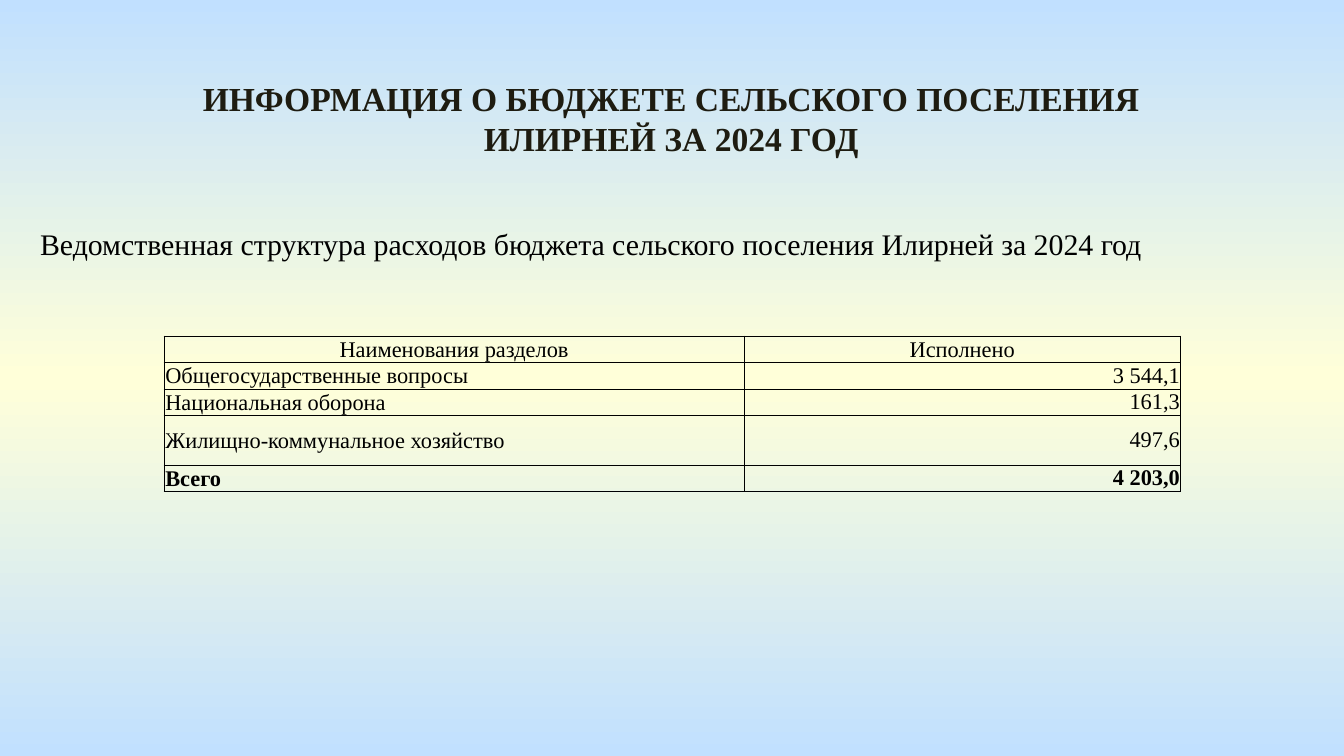
from copy import deepcopy

from lxml import etree
from pptx import Presentation
from pptx.dml.color import RGBColor
from pptx.enum.text import MSO_ANCHOR, MSO_AUTO_SIZE, PP_ALIGN
from pptx.oxml.ns import qn
from pptx.util import Inches, Pt

LEFT, CENTER, RIGHT, JUSTIFY = PP_ALIGN.LEFT, PP_ALIGN.CENTER, PP_ALIGN.RIGHT, PP_ALIGN.JUSTIFY
MIDDLE, BOTTOM, TOP = MSO_ANCHOR.MIDDLE, MSO_ANCHOR.BOTTOM, MSO_ANCHOR.TOP
NO_AUTOFIT = MSO_AUTO_SIZE.NONE

COLORS = {"sky": "C1E0FF", "cream": "FFFFD9", "title": "1E1C11", "text": "000000"}
FONT = "Times New Roman"


def write_text(frame, text, size, color, alignment, bold=False):
    frame.text = text
    font_format = {"name": FONT, "size": Pt(size), "bold": bold}
    for paragraph in frame.paragraphs:
        paragraph.alignment = alignment
        for run in paragraph.runs:
            for name, value in font_format.items():
                setattr(run.font, name, value)
            run.font.color.rgb = RGBColor.from_string(COLORS[color])


def add_borders(cell, color, width):
    properties = cell._tc.get_or_add_tcPr()
    for index, side in enumerate(("a:lnL", "a:lnR", "a:lnT", "a:lnB")):
        line = etree.Element(qn(side), w=str(Pt(width)))
        fill = etree.SubElement(line, qn("a:solidFill"))
        etree.SubElement(fill, qn("a:srgbClr"), val=COLORS[color])
        properties.insert(index, line)


presentation = Presentation()
presentation.slide_width = Inches(10)
presentation.slide_height = Inches(10) * 9 // 16
slide = presentation.slides.add_slide(presentation.slide_layouts[5])

background = slide.background.fill
background.gradient()
background.gradient_angle = 270
first_stop = background.gradient_stops[0]._gs
first_stop.addnext(deepcopy(first_stop))
gradient = ((0, "sky"), (0.5, "cream"), (1, "sky"))
for stop, (position, color) in zip(background.gradient_stops, gradient):
    stop.position = position
    stop.color.rgb = RGBColor.from_string(COLORS[color])

title = slide.shapes.title
title_box = {"left": 0.39, "top": 0.53, "width": 9.21, "height": 0.71}
for name, value in title_box.items():
    setattr(title, name, Inches(value))
subtitle = slide.shapes.add_textbox(Inches(0.2), Inches(1.63), Inches(9.61), Inches(0.64))
frame_format = {"word_wrap": True, "auto_size": NO_AUTOFIT, "vertical_anchor": TOP}
for shape in (title, subtitle):
    for name, value in frame_format.items():
        setattr(shape.text_frame, name, value)

write_text(
    title.text_frame,
    "ИНФОРМАЦИЯ О БЮДЖЕТЕ СЕЛЬСКОГО ПОСЕЛЕНИЯ\nИЛИРНЕЙ ЗА 2024 ГОД",
    18, "title", CENTER, True,
)
write_text(
    subtitle.text_frame,
    "Ведомственная структура расходов бюджета сельского поселения Илирней за 2024 год",
    16, "text", JUSTIFY,
)

expenses = (
    ("Наименования разделов", "Исполнено"),
    ("Общегосударственные вопросы", "3 544,1"),
    ("Национальная оборона", "161,3"),
    ("Жилищно-коммунальное хозяйство", "497,6"),
    ("Всего", "4 203,0"),
)
row_heights = (0.19, 0.2, 0.19, 0.37, 0.19)
column_widths = (4.32, 3.24)
table = slide.shapes.add_table(
    len(expenses), len(column_widths),
    Inches(1.22), Inches(2.5), Inches(sum(column_widths)), Inches(sum(row_heights)),
).table
table.horz_banding = False
for column, width in zip(table.columns, column_widths):
    column.width = Inches(width)

for row_index, (values, height) in enumerate(zip(expenses, row_heights)):
    table.rows[row_index].height = Inches(height)
    is_header = row_index == 0
    is_total = row_index == len(expenses) - 1
    for column_index, value in enumerate(values):
        cell = table.cell(row_index, column_index)
        is_amount = column_index == 1
        inset = Inches(0 if is_amount and not is_header else 0.01)
        cell_format = {
            "margin_left": inset, "margin_right": inset, "margin_top": inset, "margin_bottom": 0,
            "vertical_anchor": BOTTOM if is_header and is_amount else MIDDLE,
        }
        for name, setting in cell_format.items():
            setattr(cell, name, setting)
        cell.fill.background()
        alignment = CENTER if is_header else RIGHT if is_amount else LEFT
        write_text(cell.text_frame, value, 12, "text", alignment, is_total)
        add_borders(cell, "text", 0.5)

presentation.save("out.pptx")
